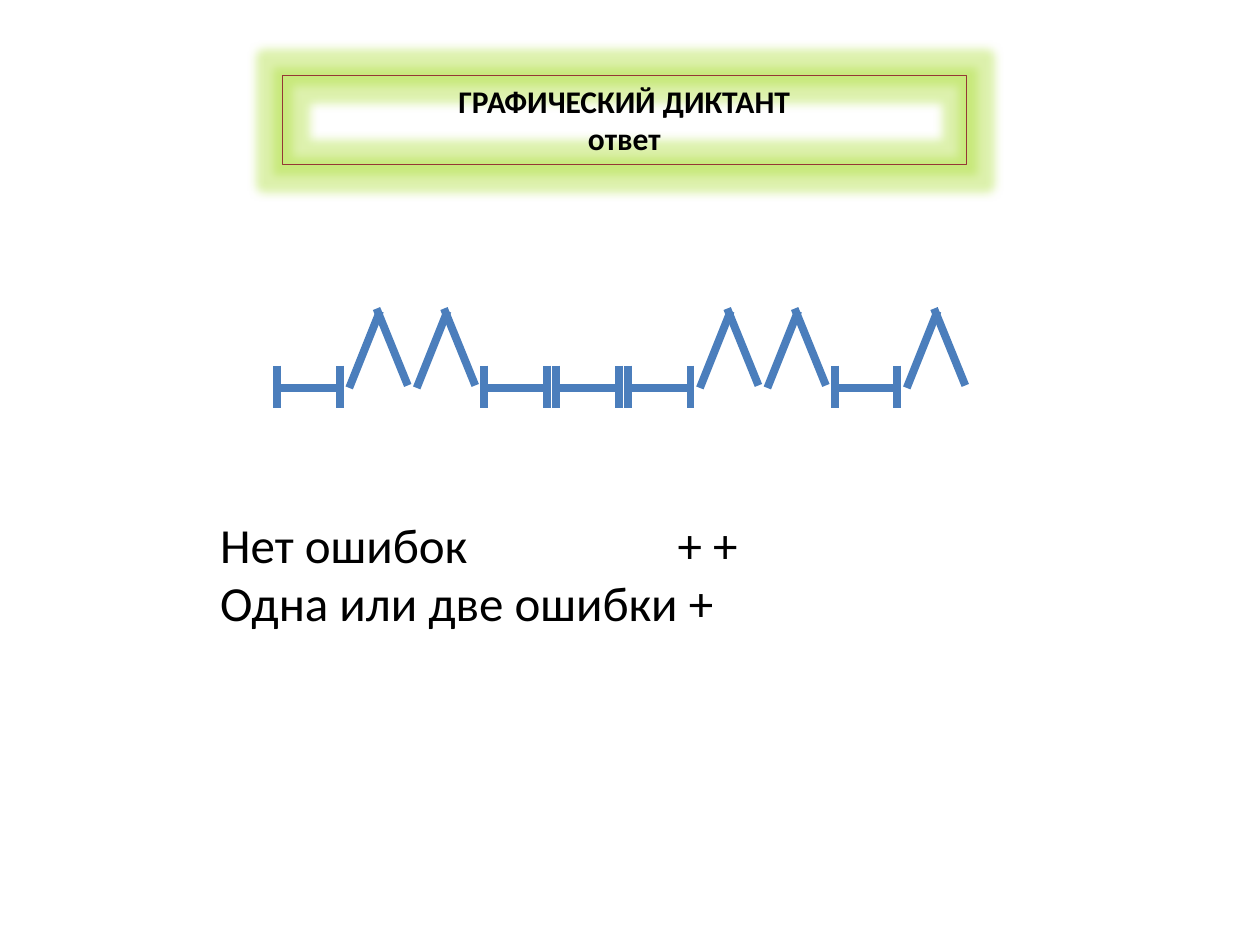
from dataclasses import dataclass

from lxml import etree
from pptx import Presentation
from pptx.dml.color import RGBColor
from pptx.enum.shapes import MSO_CONNECTOR, MSO_SHAPE
from pptx.enum.text import MSO_ANCHOR, MSO_AUTO_SIZE, PP_ALIGN
from pptx.oxml.ns import qn
from pptx.util import Cm, Pt

LINE = MSO_CONNECTOR.STRAIGHT
RECT = MSO_SHAPE.RECTANGLE
TOP = MSO_ANCHOR.TOP
GROW = MSO_AUTO_SIZE.SHAPE_TO_FIT_TEXT
MID = PP_ALIGN.CENTER
LEFT = PP_ALIGN.LEFT


@dataclass(frozen=True)
class Theme:
    font: str = "Calibri"
    ink: str = "000000"
    frame: str = "953735"
    glow: str = "AADE34"
    sign: str = "4B7EBC"
    head: float = 18
    body: float = 28
    thin: float = 0.75
    thick: float = 4.5


THEME = Theme()
ORDER = "-^^---^^-^"
START = 5.59
STEP = {"-": 1.45, "^": 1.36}
SIGNS = {
    "-": [(0, 7.82, 1.26, 7.82), (1.26, 7.37, 1.26, 8.23), (0, 7.37, 0, 8.23)],
    "^": [(0, 7.82, 0.62, 6.27), (1.18, 7.77, 0.55, 6.22)],
}


def paint(line, color, width):
    line.color.rgb = RGBColor.from_string(color)
    line.width = Pt(width)


def add_tab(para, pos):
    tabs = etree.SubElement(para._p.get_or_add_pPr(), qn("a:tabLst"))
    etree.SubElement(tabs, qn("a:tab"), pos=str(Cm(pos)), algn="l")


def add_glow(shape, color, size):
    effects = shape._element.spPr.find(qn("a:effectLst"))
    glow = etree.SubElement(effects, qn("a:glow"), rad=str(Pt(size)))
    fill = etree.SubElement(glow, qn("a:srgbClr"), val=color)
    etree.SubElement(fill, qn("a:alpha"), val="40000")


def write(shape, rows, size, bold=False, align=LEFT, tab=None):
    frame = shape.text_frame
    setup = {"word_wrap": True, "auto_size": GROW, "vertical_anchor": TOP}
    for name, value in setup.items():
        setattr(frame, name, value)
    style = {"name": THEME.font, "size": Pt(size), "bold": bold}
    for i, text in enumerate(rows):
        para = frame.add_paragraph() if i else frame.paragraphs[0]
        para.alignment = align
        if tab and "\t" in text:
            add_tab(para, tab)
        run = para.add_run()
        run.text = text
        for name, value in style.items():
            setattr(run.font, name, value)
        run.font.color.rgb = RGBColor.from_string(THEME.ink)


def add_head(slide, rows):
    box = slide.shapes.add_shape(RECT, Cm(5.69), Cm(1.52), Cm(13.79), Cm(1.8))
    box.shadow.inherit = False
    box.fill.background()
    paint(box.line, THEME.frame, THEME.thin)
    add_glow(box, THEME.glow, 11)
    write(box, rows, THEME.head, bold=True, align=MID)


def add_key(slide, rows):
    box = slide.shapes.add_textbox(Cm(4.19), Cm(10.24), Cm(17.5), Cm(2.64))
    write(box, rows, THEME.body, tab=9.22)


def add_sign(slide, kind, left):
    group = slide.shapes.add_group_shape()
    for x1, y1, x2, y2 in SIGNS[kind]:
        ends = Cm(left + x1), Cm(y1), Cm(left + x2), Cm(y2)
        stroke = group.shapes.add_connector(LINE, *ends)
        paint(stroke.line, THEME.sign, THEME.thick)
        etree.SubElement(stroke._element.spPr, qn("a:effectLst"))


def add_row(slide):
    left = START
    for kind in ORDER:
        add_sign(slide, kind, left)
        left += STEP[kind]


def main():
    deck = Presentation()
    deck.slide_width, deck.slide_height = Cm(25.4), Cm(19.05)
    slide = deck.slides.add_slide(deck.slide_layouts[6])
    add_head(slide, ["ГРАФИЧЕСКИЙ ДИКТАНТ", "ответ"])
    add_key(slide, ["Нет ошибок\t+ +", "Одна или две ошибки +"])
    add_row(slide)
    deck.save("out.pptx")


if __name__ == "__main__":
    main()
